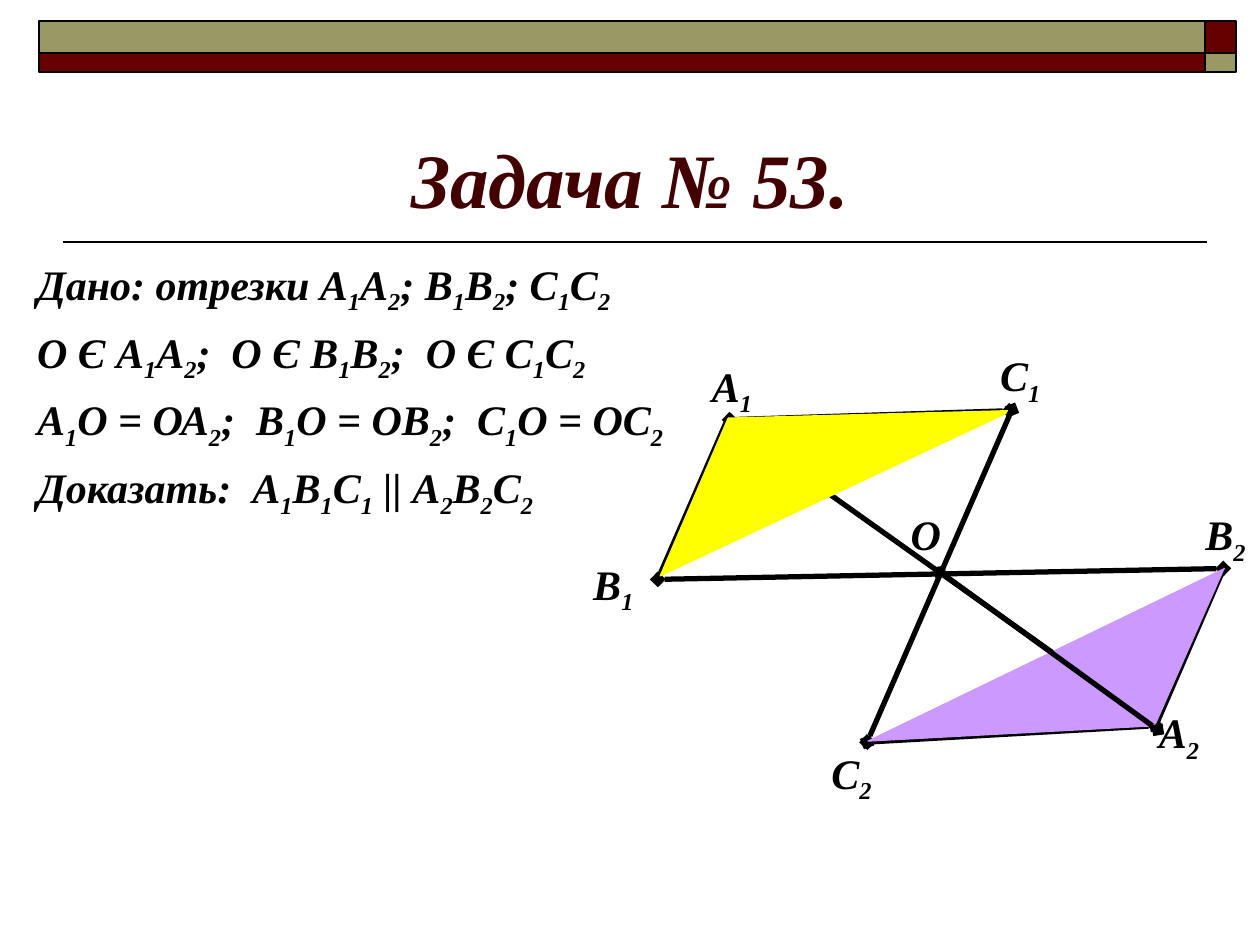
from itertools import groupby

from lxml import etree
from pptx import Presentation
from pptx.dml.color import RGBColor
from pptx.enum.shapes import MSO_CONNECTOR, MSO_SHAPE
from pptx.enum.text import MSO_ANCHOR, MSO_AUTO_SIZE, PP_ALIGN
from pptx.oxml.ns import qn
from pptx.util import Cm, Pt

RECTANGLE = MSO_SHAPE.RECTANGLE
STRAIGHT = MSO_CONNECTOR.STRAIGHT
BOTTOM = MSO_ANCHOR.BOTTOM
GROW = MSO_AUTO_SIZE.SHAPE_TO_FIT_TEXT
CENTER = PP_ALIGN.CENTER

FONT = "Times New Roman"
COLORS = {
    "ink": "000000",
    "title": "420000",
    "maroon": "660000",
    "olive": "999966",
    "yellow": "FFFF00",
    "violet": "CC99FF",
}

# Points of the figure, in centimetres
A1, A2 = (14.71, 8.53), (23.29, 14.63)
B1, B2 = (13.26, 11.68), (24.66, 11.46)
C1, C2 = (20.4, 8.26), (17.48, 14.96)
O = (18.95, 11.53)

GIVEN = [
    "Дано: отрезки А1А2; В1В2; С1С2",
    "О Є А1А2;  О Є В1В2;  О Є С1С2",
    "А1О = ОА2;  В1О = ОВ2;  С1О = ОС2",
    "Доказать:  А1В1С1 || А2В2С2",
]
LABELS = [
    ("А1", 14.1, 7.14), ("В1", 11.71, 11.13), ("А2", 23.11, 14.12),
    ("В2", 24.05, 10.13), ("С2", 16.51, 14.94), ("С1", 19.91, 6.93),
    ("О", 18.11, 10.13),
]


def rgb(name):
    return RGBColor.from_string(COLORS[name])


def style(paragraph, size, color):
    font = paragraph.font
    font.name, font.size = FONT, Pt(size)
    font.bold = font.italic = True
    font.color.rgb = rgb(color)


def write_indexed(paragraph, text):
    """Write text with every number set as a subscript."""
    style(paragraph, 24, "ink")
    for is_index, letters in groupby(text, str.isdigit):
        run = paragraph.add_run()
        run.text = "".join(letters)
        if is_index:
            run._r.get_or_add_rPr().set("baseline", "-25000")


def add_bar(slide, left, top, width, height, color):
    bar = slide.shapes.add_shape(
        RECTANGLE, Cm(left), Cm(top), Cm(width), Cm(height))
    bar.shadow.inherit = False
    bar.fill.solid()
    bar.fill.fore_color.rgb = rgb(color)
    bar.line.color.rgb = rgb("ink")
    bar.line.width = Pt(1)


def add_line(slide, start, end, width=3, diamonds=False):
    line = slide.shapes.add_connector(
        STRAIGHT, *(Cm(value) for value in start + end))
    line.line.color.rgb = rgb("ink")
    line.line.width = Pt(width)
    if diamonds:
        outline = line.line._get_or_add_ln()
        for tag in ("a:headEnd", "a:tailEnd"):
            etree.SubElement(outline, qn(tag), type="diamond")
    etree.SubElement(line._element.spPr, qn("a:effectLst"))


def add_triangle(slide, corners, color):
    first, *others = [(Cm(x), Cm(y)) for x, y in corners]
    builder = slide.shapes.build_freeform(*first)
    builder.add_line_segments(others, close=False)
    triangle = builder.convert_to_shape()
    triangle.shadow.inherit = False
    triangle.fill.solid()
    triangle.fill.fore_color.rgb = rgb(color)
    triangle.line.color.rgb = rgb(color)
    triangle.line.width = Pt(0.75)


def add_label(slide, text, left, top):
    width = 1.35 if len(text) > 1 else 1.12
    label = slide.shapes.add_textbox(Cm(left), Cm(top), Cm(width), Cm(1.27))
    label.text_frame.word_wrap = False
    label.text_frame.auto_size = GROW
    write_indexed(label.text_frame.paragraphs[0], text)


def add_given(slide):
    given = slide.shapes.add_textbox(Cm(0.5), Cm(5.08), Cm(14), Cm(11.94))
    frame = given.text_frame
    frame.word_wrap = True
    for number, text in enumerate(GIVEN):
        paragraph = frame.add_paragraph() if number else frame.paragraphs[0]
        paragraph.space_before = Pt(6)
        properties = paragraph._p.get_or_add_pPr()
        properties.set("marL", str(Cm(1.3)))
        properties.set("indent", str(-Cm(1.3)))
        write_indexed(paragraph, text)


def set_title(slide, text):
    title = slide.shapes.title
    title.left, title.top = Cm(1.27), Cm(1.47)
    title.width, title.height = Cm(22.86), Cm(3.18)
    title.text_frame.vertical_anchor = BOTTOM
    title.text_frame.text = text
    paragraph = title.text_frame.paragraphs[0]
    paragraph.alignment = CENTER
    style(paragraph, 44, "title")


def add_header(slide):
    add_line(slide, (24.33, 4.88), (1.27, 4.88), width=1)
    for top, height, long_color, short_color in (
            (0.43, 0.64, "olive", "maroon"), (1.07, 0.38, "maroon", "olive")):
        add_bar(slide, 0.79, top, 23.5, height, long_color)
        add_bar(slide, 24.29, top, 0.63, height, short_color)


def add_figure(slide):
    # Segments through O
    for start, end in ((A1, A2), (B1, B2), (C1, C2)):
        add_line(slide, start, end, diamonds=True)
    # Sides of the two triangles
    add_line(slide, (14.63, 8.53), B1)
    add_line(slide, (24.64, 11.53), (23.32, 14.58))
    add_line(slide, (14.71, 8.46), (20.35, 8.28), diamonds=True)
    add_line(slide, C2, A2, diamonds=True)
    # Triangle fills, then the half segment lying over them
    add_triangle(slide, [(20.29, 8.33), (13.31, 11.61), (14.68, 8.43),
                         (20.32, 8.28)], "yellow")
    add_triangle(slide, [A2, (17.5, 14.94), (24.69, 11.46)], "violet")
    add_line(slide, O, (23.34, 14.71), diamonds=True)
    for label in LABELS:
        add_label(slide, *label)


def main():
    deck = Presentation()
    deck.slide_width, deck.slide_height = Cm(25.4), Cm(19.05)
    slide = deck.slides.add_slide(deck.slide_layouts[5])
    add_header(slide)
    set_title(slide, "Задача № 53.")
    add_given(slide)
    add_figure(slide)
    deck.save("out.pptx")


if __name__ == "__main__":
    main()
